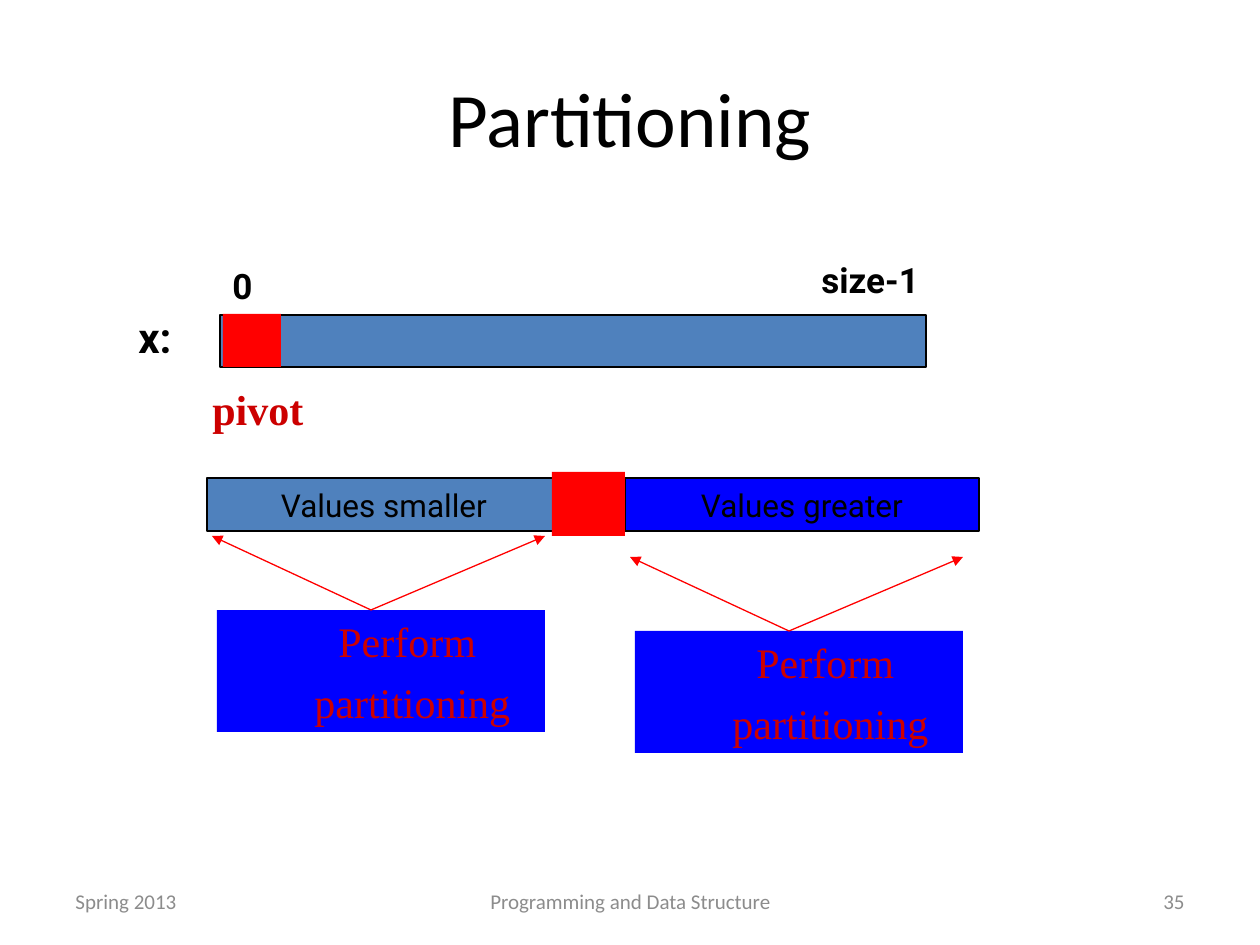
from lxml import etree
from pptx import Presentation
from pptx.dml.color import RGBColor
from pptx.enum.shapes import MSO_CONNECTOR, MSO_SHAPE
from pptx.enum.text import MSO_ANCHOR, MSO_AUTO_SIZE, PP_ALIGN
from pptx.oxml.ns import qn
from pptx.util import Pt

EMU_PER_PX = 914400 / 126
RECTANGLE = MSO_SHAPE.RECTANGLE
STRAIGHT = MSO_CONNECTOR.STRAIGHT
TOP, MIDDLE = MSO_ANCHOR.TOP, MSO_ANCHOR.MIDDLE
LEFT, CENTER, RIGHT = PP_ALIGN.LEFT, PP_ALIGN.CENTER, PP_ALIGN.RIGHT
TITLE_ONLY = 5

COLORS = {
    "black": "000000",
    "gray": "8C8C8C",
    "steel": "4F81BD",
    "blue": "0000FF",
    "red": "FF0000",
    "dark red": "CC0000",
}
MARGIN, HANGING = 102, -39


def px(*lengths):
    return [round(length * EMU_PER_PX) for length in lengths]


def color(name):
    return RGBColor.from_string(COLORS[name])


def write(shape, text, font="Roboto", size=18, fill="black", bold=False,
          align=LEFT, anchor=TOP, wrap=False, grow=False, hanging=False):
    """Fill a shape with text, one paragraph for each line."""
    frame = shape.text_frame
    frame.text = text
    frame.word_wrap = wrap
    frame.vertical_anchor = anchor
    frame.auto_size = MSO_AUTO_SIZE.SHAPE_TO_FIT_TEXT if grow else MSO_AUTO_SIZE.NONE
    for paragraph in frame.paragraphs:
        paragraph.alignment = align
        if hanging:
            margin, indent = px(MARGIN, HANGING)
            properties = paragraph._p.get_or_add_pPr()
            properties.set("marL", str(margin))
            properties.set("indent", str(indent))
            paragraph.space_before = Pt(6)
        for run in paragraph.runs:
            run.font.name = font
            run.font.size = Pt(size)
            run.font.bold = bold
            run.font.color.rgb = color(fill)


def add_label(shapes, box, text, **text_format):
    write(shapes.add_textbox(*px(*box)), text, **text_format)


def add_box(shapes, box, fill, outlined=False):
    shape = shapes.add_shape(RECTANGLE, *px(*box))
    shape.shadow.inherit = False
    shape.fill.solid()
    shape.fill.fore_color.rgb = color(fill)
    if outlined:
        shape.line.color.rgb = color("black")
        shape.line.width = Pt(0.75)
    else:
        shape.line.fill.background()
    return shape


def add_arrow(shapes, start, end):
    arrow = shapes.add_connector(STRAIGHT, *px(*start, *end))
    arrow.line.color.rgb = color("red")
    arrow.line.width = Pt(0.75)
    etree.SubElement(arrow.line._get_or_add_ln(), qn("a:tailEnd"), type="triangle")
    etree.SubElement(arrow._element.spPr, qn("a:effectLst"))


def add_title(slide):
    title = slide.shapes.title
    title.left, title.top, title.width, title.height = px(63, 38, 1134, 158)
    write(title, "Partitioning", font="Calibri", size=44,
          align=CENTER, anchor=MIDDLE, wrap=True)


def add_footer(shapes):
    for left, width, text, align in (
        (63, 294, "Spring 2013", LEFT),
        (431, 399, "Programming and Data Structure", CENTER),
        (903, 294, "35", RIGHT),
    ):
        add_label(shapes, (left, 876, width, 50), text, font="Calibri", size=12,
                  fill="gray", align=align, anchor=MIDDLE, wrap=True)


def add_array(shapes):
    add_box(shapes, (220, 315, 706, 52), "steel", outlined=True)
    add_label(shapes, (220, 258, 48, 54), "0", size=20, bold=True, grow=True)
    add_label(shapes, (809, 252, 180, 54), "size-1", size=20, bold=True,
              wrap=True, grow=True)
    add_label(shapes, (126, 305, 66, 63), "x:", size=24, bold=True, grow=True)
    add_box(shapes, (223, 314, 58, 53), "red")
    add_label(shapes, (137, 377, 179, 63), "pivot", font="Times New Roman",
              size=24, fill="dark red", bold=True, grow=True, hanging=True)


def add_partitioned_array(shapes):
    group = shapes.add_group_shape().shapes
    for left, fill, text in ((207, "steel", "Values smaller"),
                             (625, "blue", "Values greater")):
        part = add_box(group, (left, 478, 354, 53), fill, outlined=True)
        write(part, text, align=CENTER, anchor=MIDDLE)
    add_box(group, (552, 472, 73, 64), "red")


def add_partition_step(shapes, left, top):
    """Draw a step box whose two arrows span the part above it."""
    group = shapes.add_group_shape().shapes
    step = add_box(group, (left, top, 328, 122), "blue")
    write(step, "Perform \npartitioning", font="Times New Roman", size=24,
          fill="dark red", align=CENTER, anchor=MIDDLE, hanging=True)
    for end in (left - 5, left + 328):
        add_arrow(group, (left + 154, top), (end, top - 74))


def main():
    presentation = Presentation()
    presentation.slide_width, presentation.slide_height = px(1260, 945)
    slide = presentation.slides.add_slide(presentation.slide_layouts[TITLE_ONLY])
    add_title(slide)
    add_footer(slide.shapes)
    add_array(slide.shapes)
    add_partitioned_array(slide.shapes)
    for left, top in ((217, 610), (635, 631)):
        add_partition_step(slide.shapes, left, top)
    presentation.save("out.pptx")


if __name__ == "__main__":
    main()
